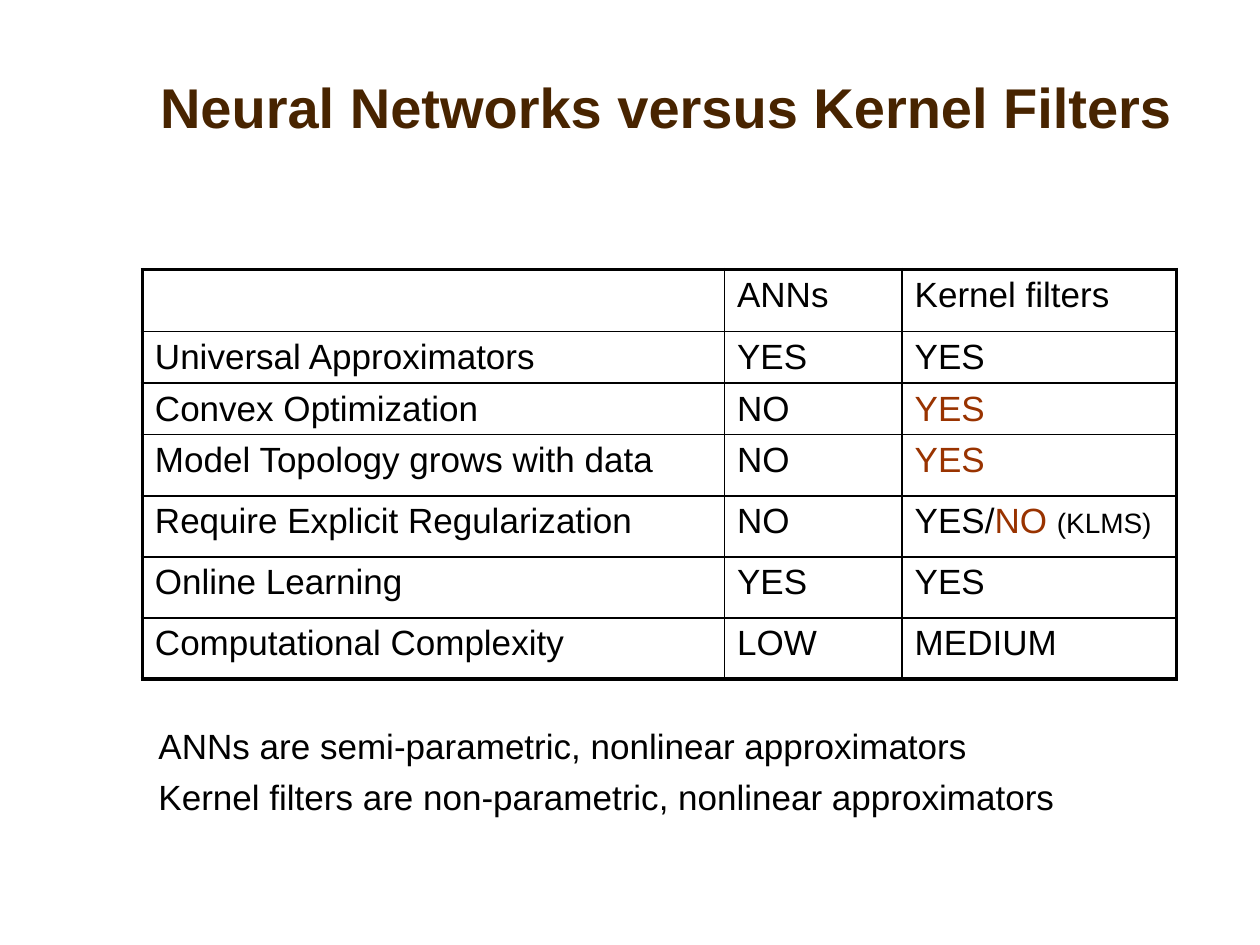
from dataclasses import dataclass

from lxml.etree import SubElement
from pptx import Presentation
from pptx.dml.color import RGBColor
from pptx.enum.text import MSO_ANCHOR, PP_ALIGN
from pptx.oxml.ns import qn
from pptx.util import Inches, Pt


@dataclass(frozen=True)
class Theme:
    font: str = "Arial"
    title_color: str = "482400"
    ink: str = "000000"
    accent: str = "993300"
    title_size: float = 32
    text_size: float = 20
    small_size: float = 16
    outer_line: float = 2.25
    inner_line: float = 1


THEME = Theme()


def add_text(paragraph, text, *, size=THEME.text_size, color=THEME.ink, bold=False):
    run = paragraph.add_run()
    run.text = text
    run.font.name = THEME.font
    run.font.size = Pt(size)
    run.font.bold = bold
    run.font.color.rgb = RGBColor.from_string(color)


def set_border(cell, side, width, color):
    """Draw one side (L, R, T or B) of a cell; call before filling the cell."""
    line = SubElement(cell._tc.get_or_add_tcPr(), qn(f"a:ln{side}"), w=str(Pt(width)))
    fill = SubElement(line, qn("a:solidFill"))
    SubElement(fill, qn("a:srgbClr"), val=color)


class SlideBuilder:
    def __init__(self, presentation, theme):
        self.theme = theme
        self.slide = presentation.slides.add_slide(presentation.slide_layouts[5])

    def title(self, text, left, top, width, height):
        title = self.slide.shapes.title
        title.left, title.top = Inches(left), Inches(top)
        title.width, title.height = Inches(width), Inches(height)
        frame = title.text_frame
        frame.word_wrap = True
        frame.vertical_anchor = MSO_ANCHOR.BOTTOM
        frame.margin_bottom = Inches(0.56)
        heading = frame.paragraphs[0]
        heading.alignment = PP_ALIGN.LEFT
        add_text(heading, text, size=self.theme.title_size,
                 color=self.theme.title_color, bold=True)

    def table(self, rows, left, top, column_widths, row_heights):
        """Each cell is a list of (text, format) runs."""
        table = self.slide.shapes.add_table(
            len(rows), len(column_widths), Inches(left), Inches(top),
            Inches(sum(column_widths)), Inches(sum(row_heights))).table
        table.first_row = table.horz_banding = False
        for column, width in zip(table.columns, column_widths):
            column.width = Inches(width)
        for row, height in zip(table.rows, row_heights):
            row.height = Inches(height)
        last_row, last_column = len(rows) - 1, len(column_widths) - 1
        for r, row in enumerate(rows):
            for c, runs in enumerate(row):
                cell = table.cell(r, c)
                outer_sides = {"L": c == 0, "R": c == last_column,
                               "T": r == 0, "B": r == last_row}
                for side, is_outer in outer_sides.items():
                    width = self.theme.outer_line if is_outer else self.theme.inner_line
                    set_border(cell, side, width, self.theme.ink)
                cell.fill.background()
                for text, style in runs:
                    add_text(cell.text_frame.paragraphs[0], text, **style)

    def remarks(self, lines, left, top, width, height):
        frame = self.slide.shapes.add_textbox(
            Inches(left), Inches(top), Inches(width), Inches(height)).text_frame
        frame.word_wrap = True
        for i, line in enumerate(lines):
            paragraph = frame.add_paragraph() if i else frame.paragraphs[0]
            properties = paragraph._p.get_or_add_pPr()
            properties.set("marL", str(Inches(0.38)))
            properties.set("indent", str(Inches(-0.38)))
            if i:
                paragraph.space_before = Pt(0.25 * self.theme.text_size)
            add_text(paragraph, line)


def plain(text):
    return [(text, {})]


def accented(text):
    return [(text, {"color": THEME.accent})]


COMPARISON = [
    [[], plain("ANNs"), plain("Kernel filters")],
    [plain("Universal Approximators"), plain("YES"), plain("YES")],
    [plain("Convex Optimization"), plain("NO"), accented("YES")],
    [plain("Model Topology grows with data"), plain("NO"), accented("YES")],
    [plain("Require Explicit Regularization"), plain("NO"),
     plain("YES/") + accented("NO ") + [("(KLMS)", {"size": THEME.small_size})]],
    [plain("Online Learning"), plain("YES"), plain("YES")],
    [plain("Computational Complexity"), plain("LOW"), plain("MEDIUM")],
]


def main():
    presentation = Presentation()
    presentation.slide_width, presentation.slide_height = Inches(10), Inches(7.5)
    builder = SlideBuilder(presentation, THEME)
    builder.title("Neural Networks versus Kernel Filters", 1.17, 0.42, 8.5, 1.25)
    builder.table(COMPARISON, 1.13, 2.14, [4.62, 1.41, 2.18],
                  [0.49] + [0.41] * 2 + [0.485] * 4)
    builder.remarks(["ANNs are semi-parametric, nonlinear approximators",
                     "Kernel filters are non-parametric, nonlinear approximators"],
                    1.16, 5.7, 7.74, 1.53)
    presentation.save("out.pptx")


if __name__ == "__main__":
    main()
